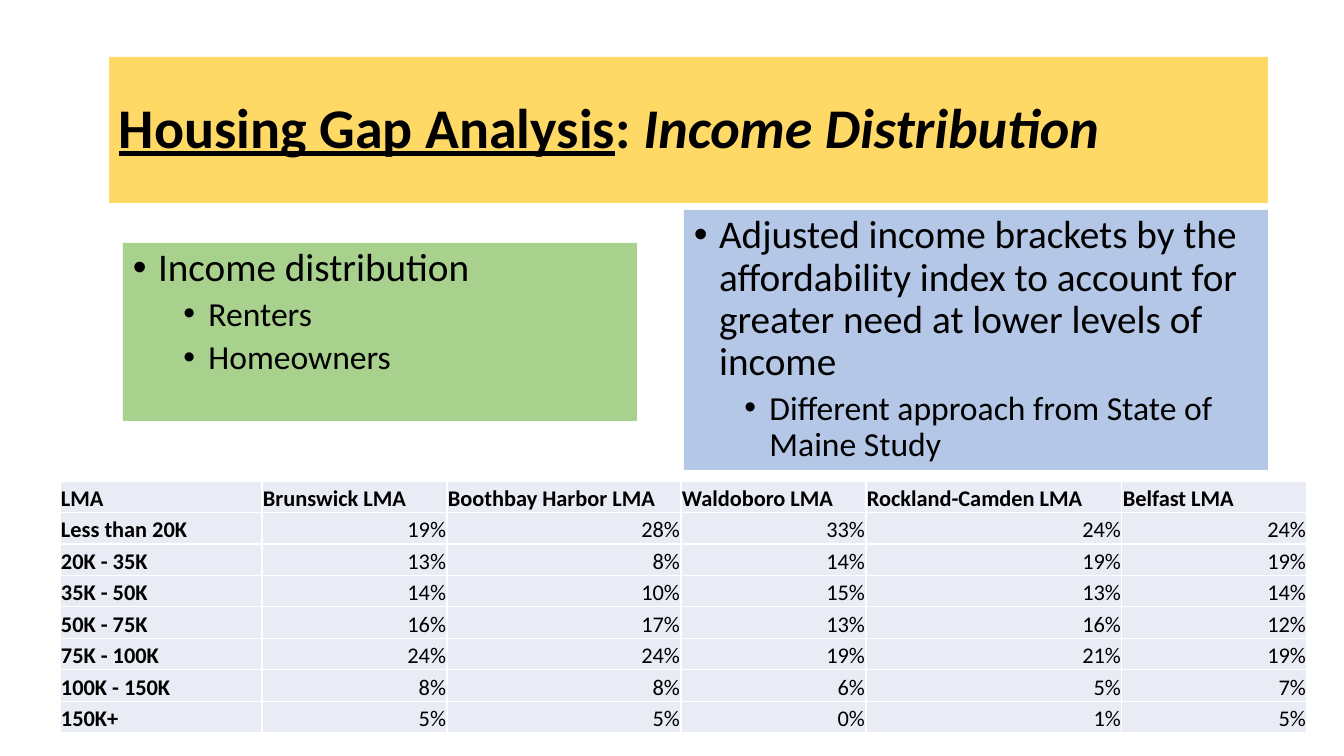
from dataclasses import dataclass

from lxml.etree import SubElement
from pptx import Presentation
from pptx.dml.color import RGBColor
from pptx.enum.shapes import MSO_SHAPE
from pptx.enum.text import MSO_ANCHOR, PP_ALIGN
from pptx.oxml.ns import qn
from pptx.util import Emu, Pt

FONT = "Calibri"
BLACK, WHITE = "000000", "FFFFFF"
GOLD, GREEN, BLUE, PALE = "FFD966", "A9D18E", "B4C7E7", "E9EBF5"


@dataclass
class Run:
    text: str
    size: int
    bold: bool = False
    italic: bool = False
    under: bool = False


@dataclass
class Para:
    runs: list[Run]
    level: int = 0
    bullet: bool = True


@dataclass
class Box:
    left: int
    top: int
    width: int
    height: int
    fill: str
    paras: list[Para]
    anchor: MSO_ANCHOR = MSO_ANCHOR.TOP


def px(count: int) -> Emu:
    return Emu(round(count * 914400 / 100.8))


def color(code: str) -> RGBColor:
    return RGBColor.from_string(code)


def paint(part, code: str) -> None:
    part.fill.solid()
    part.fill.fore_color.rgb = color(code)


def add_run(para, run: Run) -> None:
    piece = para.add_run()
    piece.text = run.text
    font = piece.font
    font.name, font.size = FONT, Pt(run.size)
    font.bold, font.italic, font.underline = run.bold, run.italic, run.under
    font.color.rgb = color(BLACK)


def add_bullet(para, level: int) -> None:
    para.level = level
    para.space_before = Pt(5 if level else 10)
    props = para._p.get_or_add_pPr()
    props.set("marL", str(228600 + 457200 * level))
    props.set("indent", "-228600")
    SubElement(props, qn("a:buFont")).set("typeface", "Arial")
    SubElement(props, qn("a:buChar")).set("char", "•")


def add_box(slide, box: Box) -> None:
    shape = slide.shapes.add_shape(
        MSO_SHAPE.RECTANGLE, px(box.left), px(box.top), px(box.width), px(box.height))
    shape.shadow.inherit = False
    paint(shape, box.fill)
    shape.line.fill.background()
    frame = shape.text_frame
    frame.word_wrap = True
    frame.vertical_anchor = box.anchor
    for i, item in enumerate(box.paras):
        para = frame.add_paragraph() if i else frame.paragraphs[0]
        para.alignment = PP_ALIGN.LEFT
        para.line_spacing = 0.9
        if item.bullet:
            add_bullet(para, item.level)
        for run in item.runs:
            add_run(para, run)


def add_edges(cell) -> None:
    props = cell._tc.get_or_add_tcPr()
    for side in ("lnL", "lnR", "lnT", "lnB"):
        line = SubElement(props, qn(f"a:{side}"), w=str(Pt(1)))
        fill = SubElement(line, qn("a:solidFill"))
        SubElement(fill, qn("a:srgbClr"), val=WHITE)


def fill_cell(cell, text: str, label: bool) -> None:
    add_edges(cell)
    paint(cell, PALE)
    cell.vertical_anchor = MSO_ANCHOR.BOTTOM
    cell.margin_left = cell.margin_right = cell.margin_top = px(1)
    cell.margin_bottom = 0
    para = cell.text_frame.paragraphs[0]
    para.alignment = PP_ALIGN.LEFT if label else PP_ALIGN.RIGHT
    add_run(para, Run(text, 16, bold=label))


def add_grid(slide, heads: list[str], rows: dict[str, list[int]], widths: list[int]) -> None:
    table = slide.shapes.add_table(
        len(rows) + 1, len(heads), px(60), px(481), px(sum(widths)), px(252)).table
    table.first_row = table.horz_banding = False
    for col, width in zip(table.columns, widths):
        col.width = px(width)
    lines = [heads] + [[name] + [f"{n}%" for n in nums] for name, nums in rows.items()]
    for r, line in enumerate(lines):
        for c, text in enumerate(line):
            fill_cell(table.cell(r, c), text, label=r == 0 or c == 0)


# Content
BOXES = [
    Box(123, 243, 514, 178, GREEN, [
        Para([Run("Income distribution", 28)]),
        Para([Run("Renters", 24)], level=1),
        Para([Run("Homeowners", 24)], level=1),
    ]),
    Box(109, 57, 1159, 146, GOLD, [
        Para([
            Run("Housing Gap Analysis", 40, bold=True, under=True),
            Run(": ", 40, bold=True),
            Run("Income Distribution", 40, bold=True, italic=True),
        ], bullet=False),
    ], MSO_ANCHOR.MIDDLE),
    Box(684, 210, 584, 260, BLUE, [
        Para([Run("Adjusted income brackets by the affordability index to account "
                  "for greater need at lower levels of income", 28)]),
        Para([Run("Different approach from State of Maine Study", 24)], level=1),
    ]),
]
HEADS = ["LMA", "Brunswick LMA", "Boothbay Harbor LMA", "Waldoboro LMA",
         "Rockland-Camden LMA", "Belfast LMA"]
WIDTHS = [202, 185, 234, 185, 256, 185]
SHARES = {
    "Less than 20K": [19, 28, 33, 24, 24],
    "20K - 35K": [13, 8, 14, 19, 19],
    "35K - 50K": [14, 10, 15, 13, 14],
    "50K - 75K": [16, 17, 13, 16, 12],
    "75K - 100K": [24, 24, 19, 21, 19],
    "100K - 150K": [8, 8, 6, 5, 7],
    "150K+": [5, 5, 0, 1, 5],
}


def main() -> None:
    deck = Presentation()
    deck.slide_width, deck.slide_height = px(1344), px(756)
    slide = deck.slides.add_slide(deck.slide_layouts[6])
    # Title and bullet panels
    for box in BOXES:
        add_box(slide, box)
    # Income shares by market area
    add_grid(slide, HEADS, SHARES, WIDTHS)
    deck.save("out.pptx")


if __name__ == "__main__":
    main()
